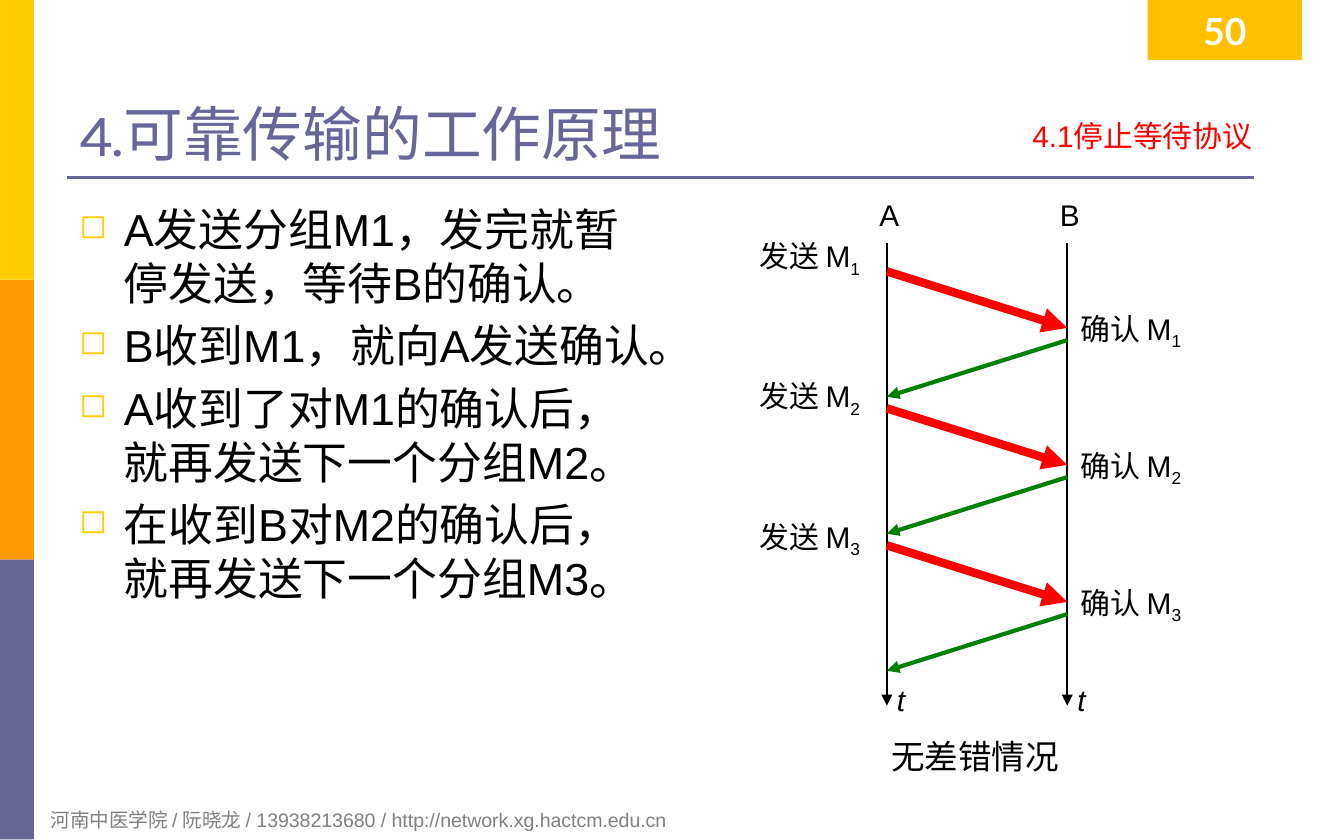
from dataclasses import dataclass

from lxml.etree import SubElement
from pptx import Presentation
from pptx.dml.color import RGBColor
from pptx.enum.shapes import MSO_CONNECTOR, MSO_SHAPE
from pptx.enum.text import MSO_ANCHOR, PP_ALIGN
from pptx.oxml.ns import qn
from pptx.slide import Slide
from pptx.util import Cm, Pt


@dataclass(frozen=True)
class Theme:
    yellow: str = "FFCC00"
    orange: str = "FF9900"
    violet: str = "666699"
    amber: str = "FFC000"
    red: str = "FF0000"
    green: str = "008000"
    black: str = "000000"
    gray: str = "808080"
    white: str = "FFFFFF"
    font: str = "Arial"
    title_font: str = "Karla"
    number_font: str = "Lato"
    title: float = 32
    body: float = 24
    number: float = 20
    caption: float = 18
    label: float = 16
    footer: float = 10.5


THEME = Theme()


@dataclass(frozen=True)
class Block:
    left: float
    top: float
    width: float
    height: float
    fill: str


@dataclass(frozen=True)
class Label:
    text: str
    left: float
    top: float
    width: float
    height: float = 0.94
    size: float = THEME.label
    color: str = THEME.black
    font: str = THEME.font
    bold: bool = False
    italic: bool = False
    align: PP_ALIGN = PP_ALIGN.LEFT
    anchor: MSO_ANCHOR = MSO_ANCHOR.TOP
    wrap: bool = False
    inset: tuple[float, float] = (0.25, 0.13)
    subscript: str = ""
    bullet: str = ""


@dataclass(frozen=True)
class Line:
    start: tuple[float, float]
    end: tuple[float, float]
    color: str
    width: float
    arrow: bool = True


def draw_block(page: Slide, block: Block) -> None:
    shape = page.shapes.add_shape(
        MSO_SHAPE.RECTANGLE, Cm(block.left), Cm(block.top), Cm(block.width), Cm(block.height)
    )
    shape.shadow.inherit = False
    shape.fill.solid()
    shape.fill.fore_color.rgb = RGBColor.from_string(block.fill)
    shape.line.fill.background()


def draw_line(page: Slide, line: Line) -> None:
    points = [Cm(value) for value in (*line.start, *line.end)]
    connector = page.shapes.add_connector(MSO_CONNECTOR.STRAIGHT, *points)
    connector.line.color.rgb = RGBColor.from_string(line.color)
    connector.line.width = Pt(line.width)
    if line.arrow:
        SubElement(connector.line._get_or_add_ln(), qn("a:tailEnd"), type="triangle")
    SubElement(connector._element.spPr, qn("a:effectLst"))


def add_bullet(paragraph, bullet: str) -> None:
    properties = paragraph._p.get_or_add_pPr()
    indent = Cm(0.84)
    properties.set("marL", str(indent))
    properties.set("indent", str(-indent))
    color = SubElement(properties, qn("a:buClr"))
    SubElement(color, qn("a:srgbClr"), val=THEME.yellow)
    SubElement(properties, qn("a:buSzPct"), val="75000")
    SubElement(properties, qn("a:buChar"), char=bullet)


def add_span(paragraph, text: str, label: Label):
    span = paragraph.add_run()
    span.text = text
    formats = {
        "name": label.font,
        "size": Pt(label.size),
        "bold": label.bold,
        "italic": label.italic,
    }
    for name, value in formats.items():
        setattr(span.font, name, value)
    span.font.color.rgb = RGBColor.from_string(label.color)
    return span


def draw_label(page: Slide, label: Label) -> None:
    box = page.shapes.add_textbox(
        Cm(label.left), Cm(label.top), Cm(label.width), Cm(label.height)
    )
    frame = box.text_frame
    side, edge = (Cm(value) for value in label.inset)
    formats = {
        "word_wrap": label.wrap,
        "vertical_anchor": label.anchor,
        "margin_left": side,
        "margin_right": side,
        "margin_top": edge,
        "margin_bottom": edge,
    }
    for name, value in formats.items():
        setattr(frame, name, value)
    for index, text in enumerate(label.text.split("\n")):
        paragraph = frame.add_paragraph() if index else frame.paragraphs[0]
        paragraph.alignment = label.align
        if label.bullet:
            add_bullet(paragraph, label.bullet)
        if index:
            paragraph.space_before = Pt(label.size * 0.2)
        add_span(paragraph, text, label)
        if label.subscript:
            span = add_span(paragraph, label.subscript, label)
            span._r.get_or_add_rPr().set("baseline", "-25000")


def draw_frame(page: Slide) -> None:
    band = 5.29
    for index, color in enumerate((THEME.yellow, THEME.orange, THEME.violet)):
        draw_block(page, Block(0, index * band, 0.64, band, color))
    draw_block(page, Block(21.69, 0, 2.92, 1.14, THEME.amber))
    draw_line(page, Line((1.27, 3.35), (23.7, 3.35), THEME.violet, 1.5, arrow=False))
    tight = (0.23, 0.1)
    points = "\n".join((
        "A发送分组M1，发完就暂停发送，等待B的确认。",
        "B收到M1，就向A发送确认。",
        "A收到了对M1的确认后，就再发送下一个分组M2。",
        "在收到B对M2的确认后，就再发送下一个分组M3。",
    ))
    labels = (
        Label("河南中医学院 / 阮晓龙 / 13938213680 / http://network.xg.hactcm.edu.cn",
              0.71, 15.14, 17.2, 0.71, THEME.footer, THEME.gray, wrap=True),
        Label("4.可靠传输的工作原理", 1.27, 0.64, 22.86, 2.64, THEME.title, THEME.violet,
              THEME.title_font, anchor=MSO_ANCHOR.BOTTOM, wrap=True, inset=tight),
        Label(points, 1.27, 3.71, 11.23, 10.49, THEME.body,
              wrap=True, inset=tight, bullet="◻"),
        Label("50", 21.69, 0, 2.92, 1.14, THEME.number, THEME.white, THEME.number_font,
              bold=True, align=PP_ALIGN.CENTER, anchor=MSO_ANCHOR.MIDDLE,
              wrap=True, inset=tight),
        Label("4.1停止等待协议", 15.9, 2.13, 8, 0.99, color=THEME.red,
              align=PP_ALIGN.RIGHT, wrap=True, inset=tight),
    )
    for label in labels:
        draw_label(page, label)


def draw_exchange(page: Slide) -> None:
    sender, receiver = 16.76, 20.17
    pitch, drop = 2.59, 1.07
    for name, axis in (("A", sender), ("B", receiver)):
        draw_line(page, Line((axis, 4.6), (axis, 13.34), THEME.black, 1))
        draw_label(page, Label(name, axis - 0.4, 3.58, 0.9, align=PP_ALIGN.CENTER))
        draw_label(page, Label("t", axis - 0.06, 12.75, 0.74, italic=True))
    for index in range(3):
        sent = 5.13 + index * pitch
        confirmed = sent + 1.3
        number = str(index + 1)
        draw_line(page, Line((sender, sent), (receiver, sent + drop), THEME.red, 4.5))
        draw_line(page, Line((receiver, confirmed), (sender, confirmed + drop),
                             THEME.green, 2.25))
        draw_label(page, Label("发送 M", 14.1, 4.37 + index * 2.65, 2.59, subscript=number))
        draw_label(page, Label("确认 M", receiver, 5.74 + index * pitch, 2.59,
                               subscript=number))
    draw_label(page, Label("无差错情况", 16.59, 13.79, 3.73, 1.02, THEME.caption))


def main() -> None:
    deck = Presentation()
    deck.slide_width, deck.slide_height = Cm(25.4), Cm(15.88)
    page = deck.slides.add_slide(deck.slide_layouts[6])
    draw_frame(page)
    draw_exchange(page)
    deck.save("out.pptx")


if __name__ == "__main__":
    main()
